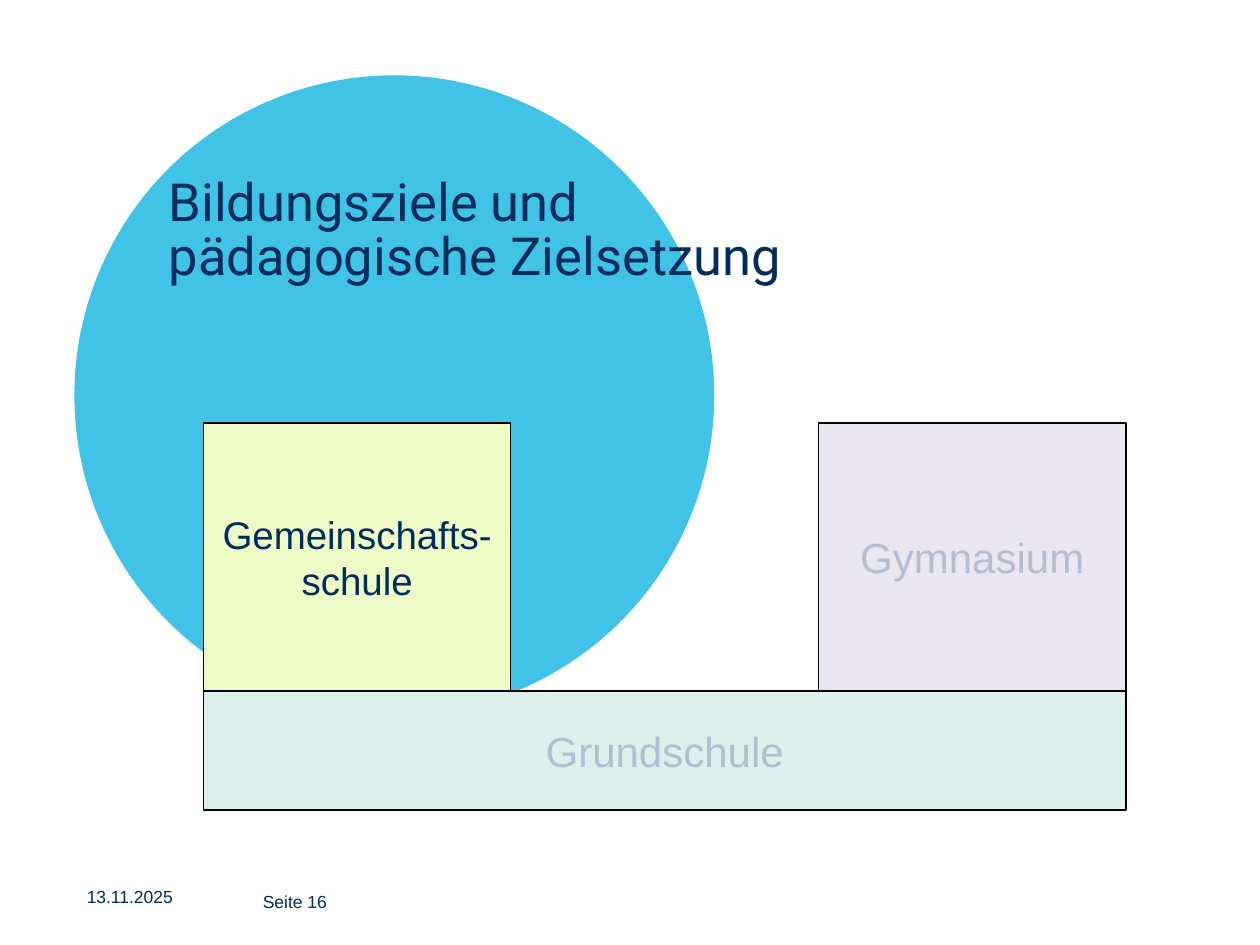
from dataclasses import dataclass

from lxml import etree
from pptx import Presentation
from pptx.dml.color import RGBColor
from pptx.enum.shapes import MSO_SHAPE
from pptx.enum.text import MSO_ANCHOR, PP_ALIGN
from pptx.oxml.ns import qn
from pptx.util import Cm, Pt

RECT, OVAL = MSO_SHAPE.RECTANGLE, MSO_SHAPE.OVAL
TOP, MIDDLE, BOTTOM = MSO_ANCHOR.TOP, MSO_ANCHOR.MIDDLE, MSO_ANCHOR.BOTTOM
LEFT, CENTER = PP_ALIGN.LEFT, PP_ALIGN.CENTER

NAVY, MUTED, CYAN, BLACK = "002D5B", "B5BED1", "00B0DF", "000000"
GRID_X, GRID_Y, COL = 4.1, 8.53, 6.2
SCHOOL_H, BASE_H = 5.4, 2.4


@dataclass
class School:
    lines: list[str]
    col: int
    span: int
    top: float
    height: float
    fill: str
    color: str
    size: int


@dataclass
class Label:
    lines: list[str]
    box: tuple[float, float, float, float]
    size: int
    font: str = "Arial"
    anchor: MSO_ANCHOR = TOP
    inset: bool = False
    wrap: bool = True
    spacing: float = 1.0


SCHOOLS = [
    School(["Grundschule"], 0, 3, GRID_Y + SCHOOL_H, BASE_H, "DDF0EC", MUTED, 24),
    School(["Gymnasium"], 2, 1, GRID_Y, SCHOOL_H, "EBE7F1", MUTED, 24),
    School(["Gemeinschafts-", "schule"], 0, 1, GRID_Y, SCHOOL_H, "EFFBC6", NAVY, 22),
]

LABELS = [
    Label(["Seite 16"], (5.3, 17.88, 3.2, 0.6), 10, anchor=MIDDLE, wrap=False),
    Label(["13.11.2025"], (1.5, 17.73, 3.2, 0.6), 10, inset=True),
    Label(["Bildungsziele und", "pädagogische Zielsetzung"], (3.4, 3.13, 20.5, 2.64),
          30, font="Roboto", anchor=BOTTOM, spacing=0.85),
]


def rgb(value: str) -> RGBColor:
    return RGBColor.from_string(value)


def write(tf, lines: list[str], size: int, color: str, font: str, align: PP_ALIGN) -> None:
    p = tf.paragraphs[0]
    p.alignment = align
    for i, line in enumerate(lines):
        if i:
            p.add_line_break()
        r = p.add_run()
        r.text = line
        r.font.size = Pt(size)
        r.font.name = font
        r.font.color.rgb = rgb(color)


def add_circle(s, left: float, top: float, size: float) -> None:
    sp = s.shapes.add_shape(OVAL, Cm(left), Cm(top), Cm(size), Cm(size))
    sp.shadow.inherit = False
    sp.fill.solid()
    sp.fill.fore_color.rgb = rgb(CYAN)
    sp.line.fill.background()
    clr = sp.element.spPr.find(qn("a:solidFill")).find(qn("a:srgbClr"))
    etree.SubElement(clr, qn("a:alpha"), val="75000")


def add_school(s, school: School) -> None:
    sp = s.shapes.add_shape(RECT, Cm(GRID_X + school.col * COL), Cm(school.top),
                            Cm(school.span * COL), Cm(school.height))
    sp.shadow.inherit = False
    sp.fill.solid()
    sp.fill.fore_color.rgb = rgb(school.fill)
    sp.line.color.rgb = rgb(BLACK)
    sp.line.width = Pt(0.75)
    tf = sp.text_frame
    tf.word_wrap = False
    tf.vertical_anchor = MIDDLE
    write(tf, school.lines, school.size, school.color, "Arial", CENTER)


def add_label(s, label: Label) -> None:
    tf = s.shapes.add_textbox(*map(Cm, label.box)).text_frame
    tf.word_wrap = label.wrap
    tf.vertical_anchor = label.anchor
    if not label.inset:
        tf.margin_left = tf.margin_top = tf.margin_right = tf.margin_bottom = 0
    write(tf, label.lines, label.size, NAVY, label.font, LEFT)
    tf.paragraphs[0].line_spacing = label.spacing


def main() -> None:
    prs = Presentation()
    prs.slide_width, prs.slide_height = Cm(25.4), Cm(19.05)
    s = prs.slides.add_slide(prs.slide_layouts[6])
    add_circle(s, 1.5, 1.52, 12.9)
    for label in LABELS:
        add_label(s, label)
    for school in SCHOOLS:
        add_school(s, school)
    prs.save("out.pptx")


if __name__ == "__main__":
    main()
